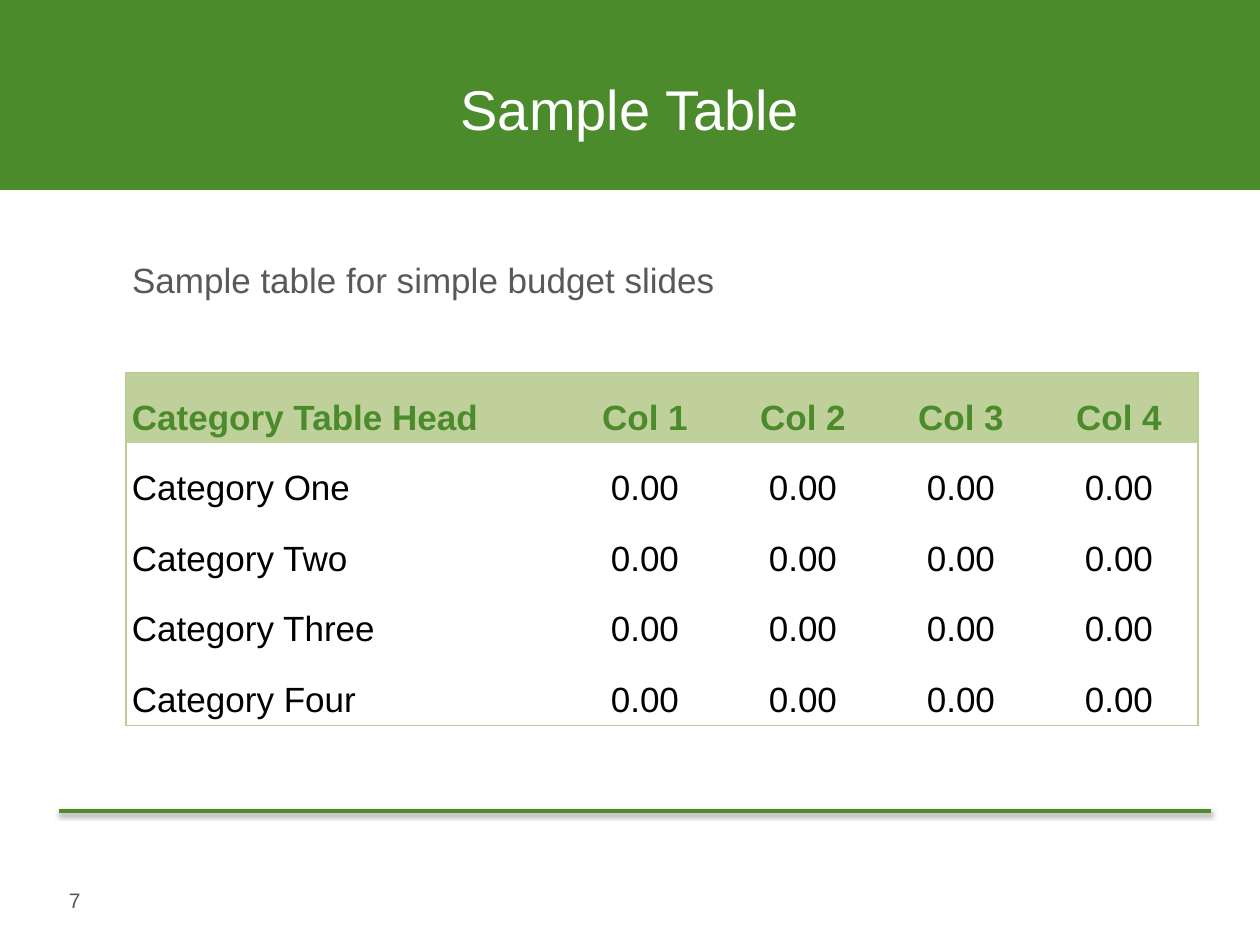
from lxml import etree
from pptx import Presentation
from pptx import util as u
from pptx.dml import color
from pptx.enum import shapes, text
from pptx.oxml import ns

PX = u.Inches(1) / 126
GREEN, GREY, WHITE, BLACK = "4B8B2B", "595959", "FFFFFF", "000000"
RULE, HEADER, BORDER = "4F8B2B", "C0D09B", "BBCD96"
HEADINGS = ["Category Table Head"] + [f"Col {number}" for number in range(1, 5)]
CATEGORIES = ["One", "Two", "Three", "Four"]
ROWS = [HEADINGS] + [[f"Category {name}"] + ["0.00"] * 4 for name in CATEGORIES]


def px(length):
    return u.Emu(round(length * PX))


def rgb(value):
    return color.RGBColor.from_string(value)


def add_xml(parent, tag, **attributes):
    return etree.SubElement(parent, ns.qn(tag), attributes)


def assign(target, values):
    for name, value in values.items():
        setattr(target, name, value)


class SlideBuilder:
    """Hold the text style and the slide being filled."""

    font_name = "Arial"
    inset = 6

    def __init__(self, slide):
        self.slide = slide

    def place(self, shape, left, top, width, height):
        assign(shape, {"left": px(left), "top": px(top),
                       "width": px(width), "height": px(height)})

    def insets(self, target):
        sides = ("left", "top", "right", "bottom")
        assign(target, {f"margin_{side}": px(self.inset) for side in sides})

    def fill_paragraph(self, paragraph, words, size, ink, bold=False, **layout):
        paragraph.text = words
        assign(paragraph, layout)
        assign(paragraph.font, {"name": self.font_name, "size": u.Pt(size), "bold": bold})
        paragraph.font.color.rgb = rgb(ink)

    def frame(self, shape, wrap=True, anchor=text.MSO_ANCHOR.TOP):
        """Format the text frame and return its first paragraph."""
        frame = shape.text_frame
        self.insets(frame)
        assign(frame, {"word_wrap": wrap, "vertical_anchor": anchor,
                       "auto_size": text.MSO_AUTO_SIZE.NONE})
        return frame.paragraphs[0]

    def banner(self, *box):
        shape = self.slide.shapes.add_shape(shapes.MSO_SHAPE.RECTANGLE, *map(px, box))
        shape.shadow.inherit = False
        shape.fill.solid()
        shape.fill.fore_color.rgb = rgb(GREEN)
        shape.line.fill.background()
        self.slide.shapes.title.element.addprevious(shape.element)

    def title(self, words, *box):
        shape = self.slide.shapes.title
        self.place(shape, *box)
        shape.fill.solid()
        shape.fill.fore_color.rgb = rgb(GREEN)
        shape.line.color.rgb = rgb(GREEN)
        shape.line.width = u.Pt(0.25)
        paragraph = self.frame(shape, anchor=text.MSO_ANCHOR.MIDDLE)
        self.fill_paragraph(paragraph, words, 32, WHITE, alignment=text.PP_ALIGN.CENTER)

    def body(self, words, *box):
        shape = self.slide.placeholders[1]
        self.place(shape, *box)
        paragraph = self.frame(shape)
        properties = paragraph._p.get_or_add_pPr()
        for name in ("marL", "indent"):
            properties.set(name, "0")
        add_xml(properties, "a:buNone")
        self.fill_paragraph(paragraph, words, 20, GREY, space_before=u.Pt(0))

    def label(self, words, *box):
        shape = self.slide.shapes.add_textbox(*map(px, box))
        self.fill_paragraph(self.frame(shape, wrap=False), words, 12, GREY)

    def rule(self, left, right, top):
        """Draw a horizontal line with a soft shadow below it."""
        line = self.slide.shapes.add_connector(
            shapes.MSO_CONNECTOR.STRAIGHT, px(left), px(top), px(right), px(top))
        line.line.color.rgb = rgb(RULE)
        line.line.width = u.Pt(2)
        effects = add_xml(line.element.spPr, "a:effectLst")
        shadow = add_xml(effects, "a:outerShdw", blurRad=str(u.Pt(3)), dist=str(u.Pt(1.6)),
                         dir="5400000", rotWithShape="0")
        add_xml(add_xml(shadow, "a:srgbClr", val=BLACK), "a:alpha", val="38000")

    def borders(self, cell, outer):
        """Line the outer edges and clear the others, ahead of the cell fill."""
        properties = cell._tc.get_or_add_tcPr()
        for tag, is_outer in outer.items():
            edge = add_xml(properties, f"a:{tag}", w=str(u.Pt(0.75)))
            if is_outer:
                add_xml(add_xml(edge, "a:solidFill"), "a:srgbClr", val=BORDER)
            else:
                add_xml(edge, "a:noFill")

    def table(self, rows, left, top, column_widths, row_height):
        last_row, last_column = len(rows) - 1, len(column_widths) - 1
        box = (left, top, sum(column_widths), row_height * len(rows))
        table = self.slide.shapes.add_table(
            len(rows), len(column_widths), *map(px, box)).table
        table.horz_banding = False
        for column, width in zip(table.columns, column_widths):
            column.width = px(width)
        for r, values in enumerate(rows):
            table.rows[r].height = px(row_height)
            is_header = r == 0
            for c, value in enumerate(values):
                cell = table.cell(r, c)
                self.insets(cell)
                cell.vertical_anchor = text.MSO_ANCHOR.MIDDLE
                self.borders(cell, {"lnL": c == 0, "lnR": c == last_column,
                                    "lnT": is_header, "lnB": r == last_row})
                if is_header:
                    cell.fill.solid()
                    cell.fill.fore_color.rgb = rgb(HEADER)
                else:
                    cell.fill.background()
                alignment = text.PP_ALIGN.CENTER if c else text.PP_ALIGN.LEFT
                self.fill_paragraph(cell.text_frame.paragraphs[0], value, 20,
                                    GREEN if is_header else BLACK, bold=is_header,
                                    alignment=alignment, line_spacing=1.5)


def main():
    presentation = Presentation()
    assign(presentation, {"slide_width": px(1260), "slide_height": px(945)})
    slide = presentation.slides.add_slide(presentation.slide_layouts[1])
    builder = SlideBuilder(slide)
    builder.banner(0, 0, 1260, 190)
    builder.rule(59, 1211, 811)
    builder.label("7", 63, 882, 26, 39)
    builder.body("Sample table for simple budget slides", 126, 252, 1005, 478)
    builder.title("Sample Table", 63, 38, 1134, 141)
    builder.table(ROWS, 126, 373, [440] + [158] * 4, 52)
    presentation.save("out.pptx")


if __name__ == "__main__":
    main()
